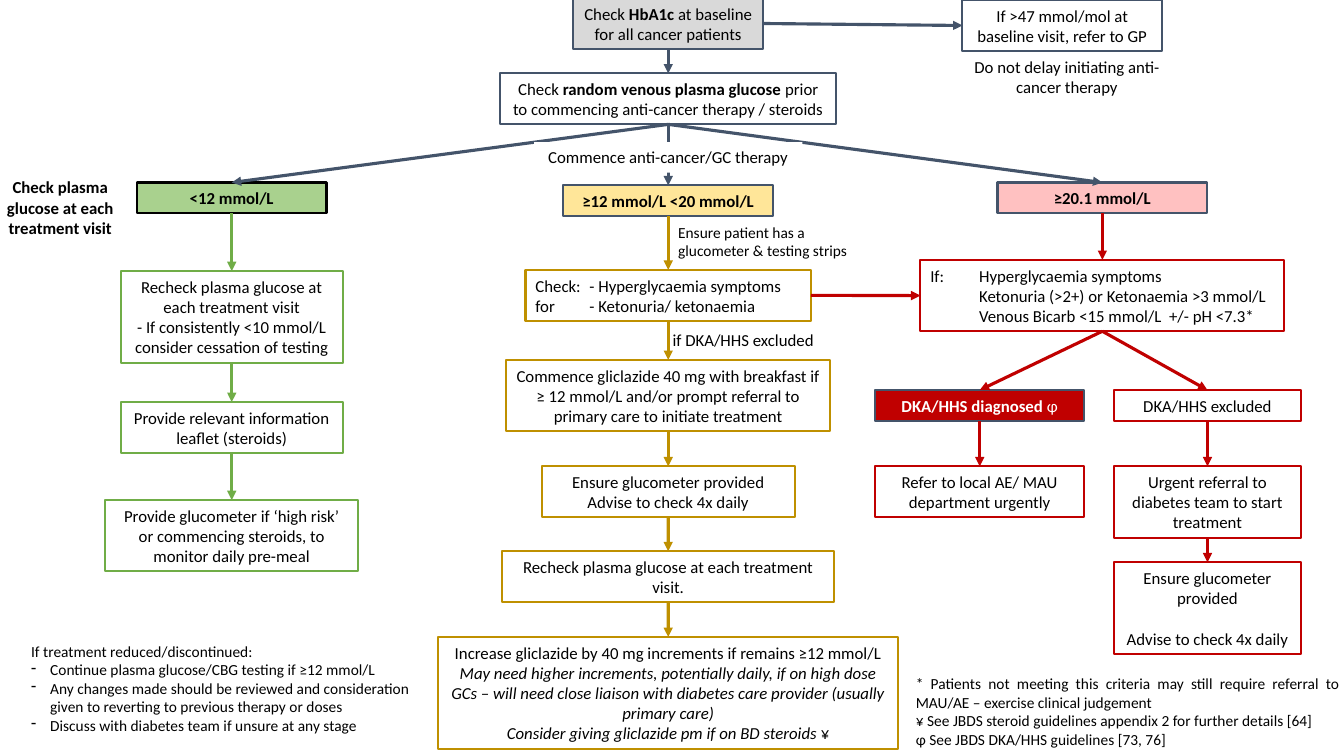
import pptx
import pptx.util
import pptx.dml.color
import pptx.enum.shapes
import pptx.enum.text
import pptx.oxml.ns
import lxml.etree

Cm, Pt = pptx.util.Cm, pptx.util.Pt
ALIGN = pptx.enum.text.PP_ALIGN

COLORS = {
    "black": "000000", "white": "FFFFFF", "slate": "44546A", "grey": "D9D9D9",
    "lime": "A9D18E", "green": "70AD47", "cream": "FFE699", "gold": "BF9000",
    "pink": "FFC1C1", "red": "C00000",
}

LOW, MIDDLE, HIGH, DIAGNOSED, EXCLUDED = 5.84, 16.84, 27.78, 24.69, 30.43

# name: centre, top, width, text lines, fill, line, paragraphs
BOXES = {
    "baseline": (MIDDLE, -0.05, 4.78, 2, "grey", "slate",
                 [["Check ", ("HbA1c", "b"), " at baseline for all cancer patients"]]),
    "random": (MIDDLE, 1.85, 8.46, 2, None, "slate",
               [["Check ", ("random venous plasma glucose ", "b"),
                 "prior to commencing anti-cancer therapy / steroids"]]),
    "gp": (26.77, 0, 5.03, 2, None, "slate",
           [["If >47 mmol/mol at baseline visit, refer to GP"]]),
    "low": (LOW, 4.6, 4.78, 1, "lime", "black", [[("<12 mmol/L", "b")]]),
    "middle": (MIDDLE, 4.67, 5.28, 1, "cream", "slate", [[("≥12 mmol/L <20 mmol/L", "b")]]),
    "high": (HIGH, 4.6, 5.28, 1, "pink", "slate", [[("≥20.1 mmol/L", "b")]]),
    "low recheck": (LOW, 6.83, 5.59, 4, None, "green",
                    [["Recheck plasma glucose at each treatment visit"],
                     ["- If consistently <10 mmol/L consider cessation of testing"]]),
    "leaflet": (LOW, 10.13, 5.59, 2, None, "green",
                [["Provide relevant information leaflet (steroids)"]]),
    "low glucometer": (LOW, 12.6, 6.38, 3, None, "green",
                       [["Provide glucometer if ‘high risk’ or commencing steroids, "
                         "to monitor daily pre-meal"]]),
    "symptoms": (MIDDLE, 6.8, 7.19, 2, None, "gold",
                 [["Check:\t- Hyperglycaemia symptoms"], ["for\t- Ketonuria/ ketonaemia"]]),
    "gliclazide": (MIDDLE, 9.07, 8.18, 3, None, "gold",
                   [["Commence gliclazide 40 mg with breakfast if ≥ 12 mmol/L and/or "
                     "prompt referral to primary care to initiate treatment"]]),
    "middle glucometer": (MIDDLE, 11.75, 6.38, 2, None, "gold",
                          [["Ensure glucometer provided"], ["Advise to check 4x daily"]]),
    "middle recheck": (MIDDLE, 13.89, 8.38, 2, None, "gold",
                       [["Recheck plasma glucose at each treatment visit."]]),
    "increase": (MIDDLE, 16.05, 11.58, 5, None, "gold",
                 [["Increase gliclazide by 40 mg increments if remains ≥12 mmol/L"],
                  [("May need higher increments, potentially daily, if on high dose GCs – will "
                    "need close liaison with diabetes care provider (usually primary care)", "i")],
                  [("Consider giving gliclazide pm if on BD steroids", "i"), " ¥"]]),
    "criteria": (HIGH, 6.55, 9.17, 3, None, "red",
                 [["If:\tHyperglycaemia symptoms"],
                  ["\tKetonuria (>2+) or Ketonaemia >3 mmol/L"],
                  ["\tVenous Bicarb <15 mmol/L  +/- pH <7.3*"]]),
    "diagnosed": (DIAGNOSED, 9.83, 5.28, 1, "red", "slate",
                  [[("DKA/HHS diagnosed ", "b"), "φ"]]),
    "excluded": (EXCLUDED, 9.83, 4.7, 1, None, "red", [["DKA/HHS excluded"]]),
    "emergency": (DIAGNOSED, 11.75, 5.28, 2, None, "red",
                  [["Refer to local AE/ MAU department urgently"]]),
    "urgent": (EXCLUDED, 11.75, 4.7, 3, None, "red",
               [["Urgent referral to diabetes team to start treatment"]]),
    "high glucometer": (EXCLUDED, 14.17, 4.7, 4, None, "red",
                        [["Ensure glucometer provided"], ["Advise to check 4x daily"]]),
}

# centre, top, width, text lines, fill, size, alignment, paragraphs
LABELS = [
    (MIDDLE, 3.58, 6.76, 1, "white", 12, ALIGN.CENTER, [["Commence anti-cancer/GC therapy"]]),
    (18.73, 8.18, 4.55, 1, None, 12, ALIGN.CENTER, [["if DKA/HHS excluded"]]),
    (1.52, 4.34, 3.25, 3, None, 12, ALIGN.CENTER,
     [[("Check plasma glucose at each treatment visit", "b")]]),
    (26.89, 1.3, 5.26, 2, None, 12, ALIGN.CENTER,
     [["Do not delay initiating anti-cancer therapy"]]),
    (19.23, 5.49, 4.78, 2, None, 11, ALIGN.LEFT,
     [["Ensure patient has a glucometer & testing strips"]]),
    (28.42, 16.87, 11.18, 4, None, 11, ALIGN.JUSTIFY,
     [["* Patients not meeting this criteria may still require referral to MAU/AE – "
       "exercise clinical judgement"],
      ["¥ See JBDS steroid guidelines appendix 2 for further details [64]"],
      ["φ See JBDS DKA/HHS guidelines [73, 76]"]]),
]
REDUCED = (5.87, 16.05, 10.67, 5, None, 11, ALIGN.LEFT,
           [["If treatment reduced/discontinued:"],
            ["Continue plasma glucose/CBG testing if ≥12 mmol/L"],
            ["Any changes made should be reviewed and consideration given to reverting "
             "to previous therapy or doses"],
            ["Discuss with diabetes team if unsure at any stage"]])

DOWNWARD = {
    "slate": [("baseline", "random"), ("random", "low"), ("random", "middle"), ("random", "high")],
    "green": [("low", "low recheck"), ("low recheck", "leaflet"), ("leaflet", "low glucometer")],
    "gold": [("middle", "symptoms"), ("symptoms", "gliclazide"),
             ("gliclazide", "middle glucometer"), ("middle glucometer", "middle recheck"),
             ("middle recheck", "increase")],
    "red": [("high", "criteria"), ("criteria", "diagnosed"), ("criteria", "excluded"),
            ("diagnosed", "emergency"), ("excluded", "urgent"), ("urgent", "high glucometer")],
}
SIDEWAYS = {"slate": [("baseline", "gp")], "red": [("symptoms", "criteria")]}
TOP, LEFT, BOTTOM, RIGHT = range(4)
TAB_STOPS = {"symptoms": 1.36, "criteria": 1.23}


def color(name):
    return pptx.dml.color.RGBColor.from_string(COLORS[name])


def add_child(parent, tag, **attributes):
    return lxml.etree.SubElement(parent, pptx.oxml.ns.qn(tag), attributes)


def place(centre, top, width, lines, size):
    return Cm(centre - width / 2), Cm(top), Cm(width), Cm(0.26 + lines * size * 0.0427)


def write(shape, paragraphs, size, align, ink="black"):
    frame = shape.text_frame
    frame.word_wrap = True
    for index, runs in enumerate(paragraphs):
        para = frame.add_paragraph() if index else frame.paragraphs[0]
        para.alignment = align
        for run in runs:
            words, style = (run, "") if isinstance(run, str) else run
            span = para.add_run()
            span.text = words
            span.font.name, span.font.size = "Calibri", Pt(size)
            span.font.bold, span.font.italic = style == "b", style == "i"
            span.font.color.rgb = color(ink)
    return frame.paragraphs


def hang(para, distance):
    settings = para._p.get_or_add_pPr()
    settings.set("marL", str(Cm(distance)))
    settings.set("indent", str(-Cm(distance)))
    return settings


def add_arrow(start, start_side, end, end_side, ink):
    arrow = page.shapes.add_connector(pptx.enum.shapes.MSO_CONNECTOR.STRAIGHT, 0, 0, 0, 0)
    arrow.begin_connect(start, start_side)
    arrow.end_connect(end, end_side)
    arrow.line.color.rgb = color(ink)
    arrow.line.width = Pt(2.25)
    add_child(arrow.line._get_or_add_ln(), "a:tailEnd", type="triangle")
    add_child(arrow._element.spPr, "a:effectLst")


def add_label(centre, top, width, lines, fill, size, align, paragraphs):
    label = page.shapes.add_textbox(*place(centre, top, width, lines, size))
    if fill:
        label.fill.solid()
        label.fill.fore_color.rgb = color(fill)
    return write(label, paragraphs, size, align)


deck = pptx.Presentation()
deck.slide_width, deck.slide_height = Cm(33.87), Cm(19.05)
page = deck.slides.add_slide(deck.slide_layouts[6])

shapes = {}
for name, (centre, top, width, lines, fill, line, paragraphs) in BOXES.items():
    box = page.shapes.add_shape(pptx.enum.shapes.MSO_SHAPE.RECTANGLE,
                                *place(centre, top, width, lines, 12))
    box.shadow.inherit = False
    box.fill.background()
    if fill:
        box.fill.solid()
        box.fill.fore_color.rgb = color(fill)
    box.line.color.rgb = color(line)
    box.line.width = Pt(1.5)
    align = ALIGN.LEFT if name in TAB_STOPS else ALIGN.CENTER
    paras = write(box, paragraphs, 12, align, "white" if fill == "red" else "black")
    if name in TAB_STOPS:
        for para in paras:
            stops = add_child(hang(para, TAB_STOPS[name]), "a:tabLst")
            add_child(stops, "a:tab", pos=str(Cm(TAB_STOPS[name])), algn="l")
    shapes[name] = box
shapes["high glucometer"].text_frame.paragraphs[1].space_before = Pt(14.6)

for routes, start_side, end_side in ((DOWNWARD, BOTTOM, TOP), (SIDEWAYS, RIGHT, LEFT)):
    for ink, pairs in routes.items():
        for start, end in pairs:
            add_arrow(shapes[start], start_side, shapes[end], end_side, ink)

for label in LABELS:
    add_label(*label)
for para in add_label(*REDUCED)[1:]:
    add_child(hang(para, 0.48), "a:buChar", char="-")

deck.save("out.pptx")
